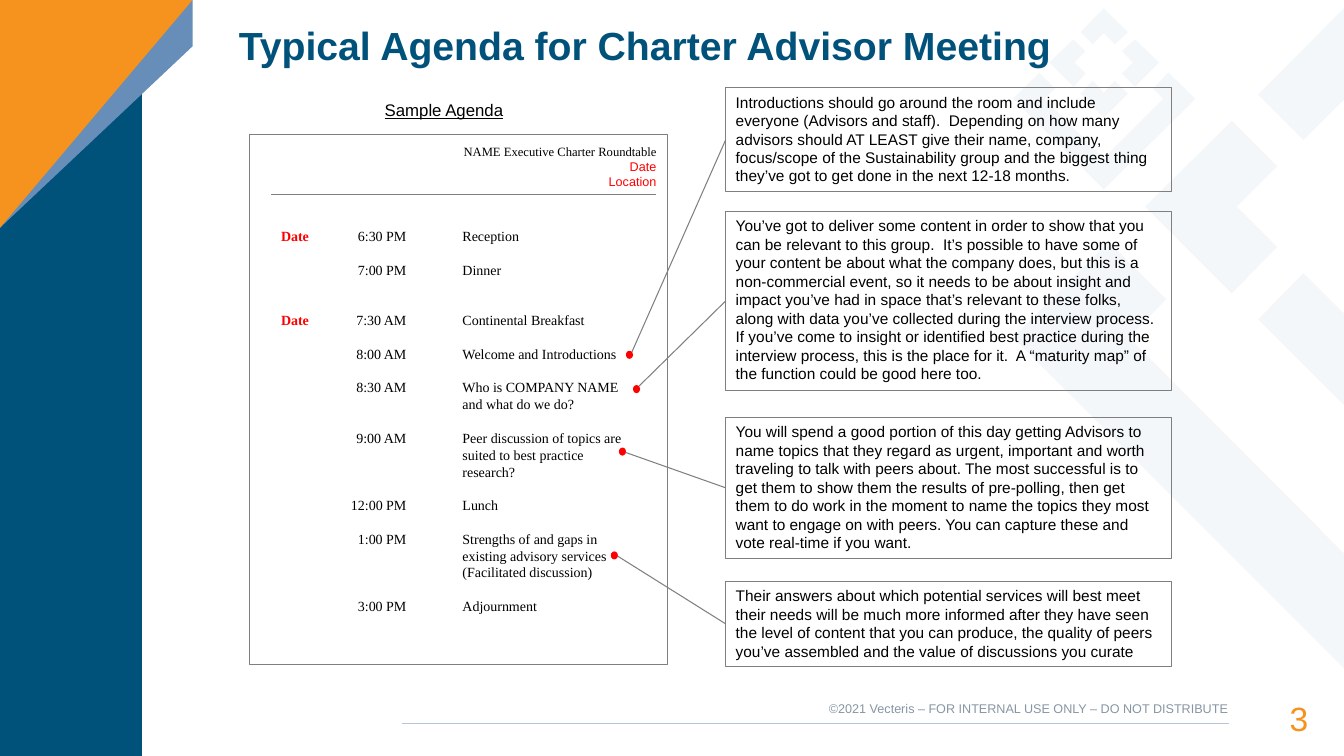
from lxml.etree import SubElement
from pptx import Presentation
from pptx.dml.color import RGBColor
from pptx.enum.shapes import MSO_CONNECTOR as Connector, MSO_SHAPE as Shape
from pptx.enum.text import MSO_ANCHOR as Anchor, PP_ALIGN as Align
from pptx.oxml.ns import qn
from pptx.util import Inches, Pt

COLORS = {
    "navy": "00527B", "steel": "668EB8", "orange": "F6921E", "mist": "E9EEF4",
    "rule": "B3C6DC", "footer": "8796A4", "grey": "7F7F7F", "red": "FF0000",
    "black": "000000",
}
SANS, SERIF = "Arial", "Times New Roman"
CELL = Inches(0.1)  # one column or row of the grid
COLUMNS, ROWS = 133.33, 75
AGENDA_LINE = 12  # points from one agenda line to the next
INSETS = (1, 0.5, 1, 0.5)

# Outlines as (column, row) corners
CHEVRONS = [
    [(122.2, 12), (113.6, 20.5), (122.2, 29.1), (126.7, 24.5), (122.7, 20.5), (126.7, 16.5)],
    [(110, 24), (100.5, 33.5), (COLUMNS, 66.3), (COLUMNS, 54.9), (112, 33.5), (115.7, 29.7)],
    [(129.3, 27.1), (124.8, 31.7), (COLUMNS, 40.2), (COLUMNS, 31.1)],
    [(COLUMNS, 0.8), (124.8, 9.4), (129.3, 13.9), (COLUMNS, 9.9)],
    [(112.6, 3.9), (111.3, 5.1), (112.4, 6.2), (111.3, 7.3), (112.6, 8.6), (115, 6.2)],
    [(106.5, 3.9), (104.1, 6.2), (106.5, 8.6), (107.7, 7.3), (106.6, 6.2), (107.7, 5.1)],
    [(109.5, 0.8), (107.2, 3.2), (108.4, 4.4), (109.5, 3.3), (110.6, 4.4), (111.9, 3.2)],
    [(108.4, 8), (107.2, 9.3), (109.5, 11.7), (111.9, 9.3), (110.6, 8), (109.5, 9.2)],
    [(103.1, 7.2), (100.5, 9.8), (109.5, 18.8), (118.6, 9.8), (115.9, 7.2),
     (114.4, 8.8), (115.4, 9.8), (109.5, 15.7), (103.6, 9.8), (104.7, 8.8)],
]
CORNER = [
    ("navy", [(0, ROWS), (14.1, ROWS), (14.1, 0), (0, 0)]),
    ("steel", [(19.1, 0), (0, 0), (0, 22.6), (19.1, 4.6)]),
    ("orange", [(19.1, 0), (0, 0), (0, 22.6)]),
]

# Each entry: agenda line it starts on, text, lines it fills
DATES = [(0, "Date", 1), (5, "Date", 1)]
TIMES = [(line, time, 1) for line, time in [
    (0, "6:30 PM"), (2, "7:00 PM"), (5, "7:30 AM"), (7, "8:00 AM"), (9, "8:30 AM"),
    (12, "9:00 AM"), (16, "12:00 PM"), (18, "1:00 PM"), (22, "3:00 PM")]]
TOPICS = [
    (0, "Reception", 1),
    (2, "Dinner", 1),
    (5, "Continental Breakfast", 1),
    (7, "Welcome and Introductions", 1),
    (9, "Who is COMPANY NAME and what do we do?", 2),
    (12, "Peer discussion of topics are suited to best practice research?", 3),
    (16, "Lunch", 1),
    (18, "Strengths of and gaps in existing advisory services", 2),
    (20, "(Facilitated discussion)", 1),
    (22, "Adjournment", 1),
]

# Each callout: top row, rows, end of its pointer, corner of its dot, text
CALLOUTS = [
    (8.7, 10.3, (62.7, 34.9), (62.1, 34.8),
     "Introductions should go around the room and include everyone (Advisors and staff).  "
     "Depending on how many advisors should AT LEAST give their name, company, focus/scope of "
     "the Sustainability group and the biggest thing they’ve got to get done in the next "
     "12-18 months."),
    (21, 17.7, (63.4, 38.3), (62.8, 38.2),
     "You’ve got to deliver some content in order to show that you can be relevant to this "
     "group.  It’s possible to have some of your content be about what the company does, but "
     "this is a non-commercial event, so it needs to be about insight and impact you’ve had in "
     "space that’s relevant to these folks, along with data you’ve collected during the "
     "interview process. If you’ve come to insight or identified best practice during the "
     "interview process, this is the place for it.  A “maturity map” of the function could be "
     "good here too."),
    (41.4, 14, (62.1, 44.9), (61.4, 44.4),
     "You will spend a good portion of this day getting Advisors to name topics that they "
     "regard as urgent, important and worth traveling to talk with peers about. The most "
     "successful is to get them to show them the results of pre-polling, then get them to do "
     "work in the moment to name the topics they most want to engage on with peers. You can "
     "capture these and vote real-time if you want."),
    (57.7, 8.4, (61, 55), (60.6, 54.7),
     "Their answers about which potential services will best meet their needs will be much "
     "more informed after they have seen the level of content that you can produce, the "
     "quality of peers you’ve assembled and the value of discussions you curate"),
]


def cells(*counts):
    return [round(count * CELL) for count in counts]


def color(name):
    return RGBColor.from_string(COLORS[name])


class SlideBuilder:
    def __init__(self, page):
        self.shapes = page.shapes

    def set_text(self, box, lines, size, font=SANS, ink="black", align=Align.LEFT,
                 anchor=Anchor.TOP, insets=INSETS, spacing=None, bold=False, underline=False):
        """Fill a box with lines, each a (text, points before it) pair."""
        frame = box.text_frame
        frame.word_wrap = True
        frame.vertical_anchor = anchor
        (frame.margin_left, frame.margin_top,
         frame.margin_right, frame.margin_bottom) = cells(*insets)
        for index, (text, before) in enumerate(lines):
            para = frame.add_paragraph() if index else frame.paragraphs[0]
            para.text = text
            para.alignment = align
            if before:
                para.space_before = Pt(before)
            if spacing:
                para.line_spacing = spacing
            para.font.name, para.font.size = font, Pt(size)
            para.font.bold, para.font.underline = bold, underline
            para.font.color.rgb = color(ink)

    def text(self, place, lines, size, **style):
        if isinstance(lines, str):
            lines = [(lines, 0)]
        self.set_text(self.shapes.add_textbox(*cells(*place)), lines, size, **style)

    def schedule(self, place, entries, **style):
        """Place agenda entries on their lines by the space before each one."""
        lines, reached = [], 0
        for start, text, height in entries:
            lines.append((text, (start - reached) * AGENDA_LINE))
            reached = start + height
        self.text(place, lines, 10, font=SERIF, **style)

    def outline(self, corners, fill, alpha=None):
        points = [cells(*corner) for corner in corners]
        builder = self.shapes.build_freeform(*points[0])
        builder.add_line_segments(points[1:], close=True)
        shape = builder.convert_to_shape()
        self.paint(shape, fill)
        if alpha:
            tint = shape._element.spPr.find(".//" + qn("a:srgbClr"))
            SubElement(tint, qn("a:alpha"), val=str(alpha * 1000))

    def paint(self, shape, fill=None, line=None):
        shape.shadow.inherit = False
        if fill:
            shape.fill.solid()
            shape.fill.fore_color.rgb = color(fill)
        else:
            shape.fill.background()
        if line:
            shape.line.color.rgb = color(line)
            shape.line.width = Pt(0.75)
        else:
            shape.line.fill.background()

    def preset(self, kind, place, fill=None, line=None):
        shape = self.shapes.add_shape(kind, *cells(*place))
        self.paint(shape, fill, line)
        return shape

    def line(self, start, end, ink="grey", width=0.75):
        line = self.shapes.add_connector(Connector.STRAIGHT, *cells(*start, *end))
        line.line.color.rgb = color(ink)
        line.line.width = Pt(width)
        SubElement(line._element.spPr, qn("a:effectLst"))
        return line

    def callout(self, top, height, target, dot, text):
        box = self.preset(Shape.RECTANGLE, (72, top, 44.2, height), line="grey")
        self.set_text(box, [(text, 0)], 11)
        pointer = self.line((72, top + height / 2), target)
        pointer.begin_connect(box, 1)
        self.preset(Shape.OVAL, (*dot, 0.7, 0.8), fill="red")


def main():
    deck = Presentation()
    deck.slide_width, deck.slide_height = cells(COLUMNS, ROWS)
    slide = SlideBuilder(deck.slides.add_slide(deck.slide_layouts[6]))

    for corners in CHEVRONS:
        slide.outline(corners, "mist", alpha=47)
    for fill, corners in CORNER:
        slide.outline(corners, fill)

    slide.text((23.6, 1.3, 109.7, 6.8), "Typical Agenda for Charter Advisor Meeting", 28,
               ink="navy", bold=True, anchor=Anchor.MIDDLE, insets=(0.1, 0.1, 0, 0), spacing=0.9)
    slide.line((39.9, 71.8), (121.9, 71.8), "rule", 0.82)
    slide.text((121.8, 69, 8, 3.8), "3", 24, ink="orange", align=Align.RIGHT,
               anchor=Anchor.MIDDLE, insets=(0, 0, 0, 0), spacing=1.19)
    slide.text((79.2, 69.5, 42.6, 1.5),
               "©2021 Vecteris – FOR INTERNAL USE ONLY – DO NOT DISTRIBUTE", 9,
               ink="footer", align=Align.RIGHT, insets=(0, 0, 0, 0))

    slide.text((32.4, 9.4, 23.3, 3), "Sample Agenda", 12, align=Align.CENTER, underline=True)
    slide.preset(Shape.RECTANGLE, (24.8, 13.3, 41.4, 52.6), line="grey")
    slide.text((39.1, 13.8, 27, 1.9), "NAME Executive Charter Roundtable", 9,
               font=SERIF, align=Align.RIGHT)
    slide.text((39.1, 15.3, 27, 4.1), [("Date", 0), ("Location", 0)], 9,
               ink="red", align=Align.RIGHT)
    slide.line((26.9, 19.3), (65.1, 19.3))
    slide.schedule((26.9, 22.1, 5.6, 11.1), DATES, ink="red", bold=True)
    slide.schedule((33.3, 22.1, 8, 39.7), TIMES, align=Align.RIGHT)
    slide.schedule((44.9, 22.1, 19.3, 39.7), TOPICS)

    for callout in CALLOUTS:
        slide.callout(*callout)
    deck.save("out.pptx")


if __name__ == "__main__":
    main()
